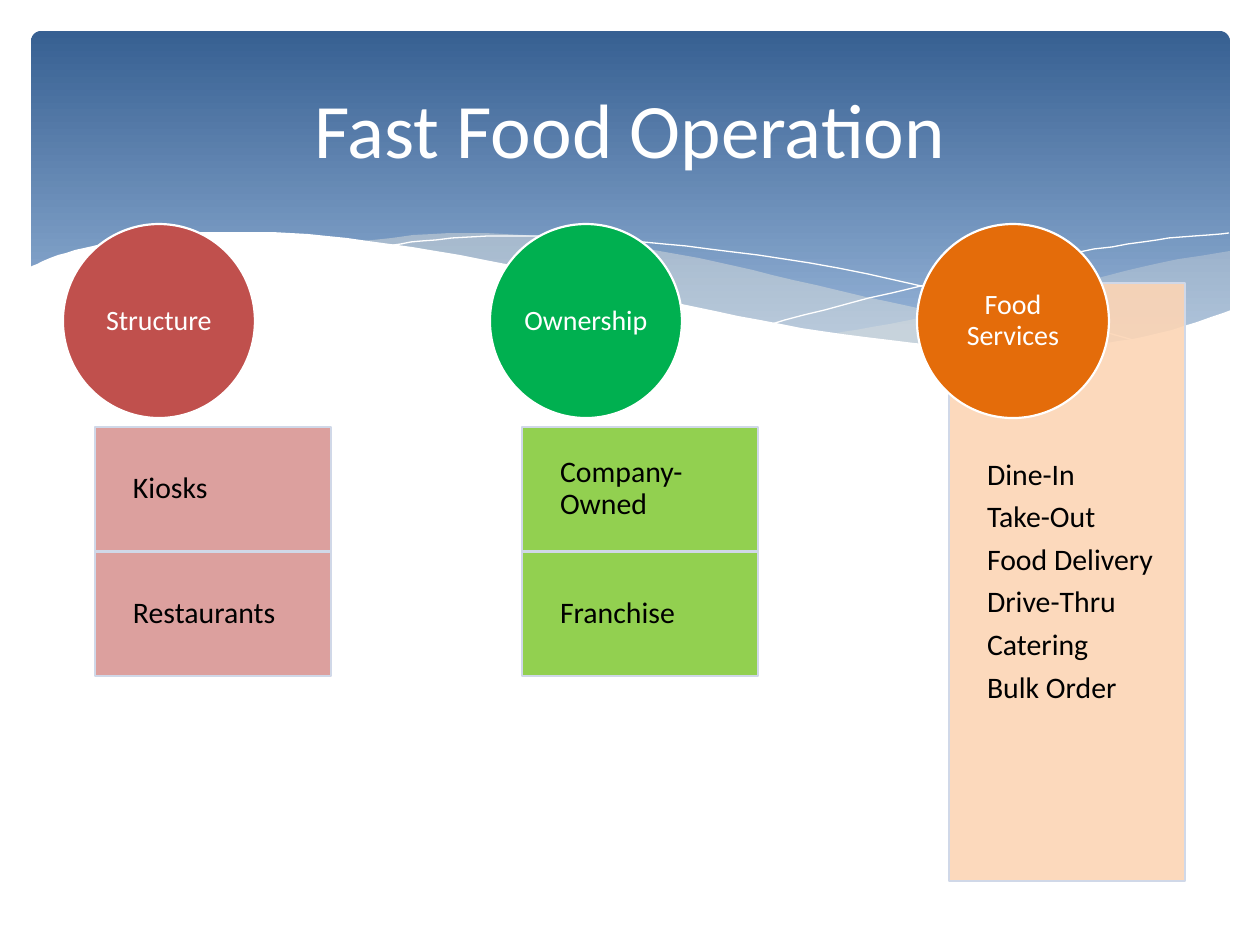
from dataclasses import dataclass

from lxml import etree
from pptx import Presentation
from pptx import util as u
from pptx.dml.color import RGBColor
from pptx.enum import shapes, text
from pptx.oxml import ns

PX = 914400 / 126


@dataclass(frozen=True)
class Theme:
    font: str = "Calibri"
    title_size: int = 44
    circle_size: int = 16
    panel_size: int = 17
    white: str = "FFFFFF"
    black: str = "000000"
    banner_top: str = "376092"
    banner_bottom: str = "95B3D7"
    wave: str = "EEECE1"
    panel_line: str = "D0D8E8"
    red: str = "C0504D"
    pink: str = "D99694"
    green: str = "00B050"
    lime: str = "92D050"
    orange: str = "E46C0A"
    peach: str = "FCD5B5"


THEME = Theme()

RIGHT_WAVE_TOP = [(1230, 251), (1160, 263), (1085, 281), (982, 305), (890, 324), (833, 334)]
RIGHT_WAVE_BOTTOM = [(833, 334), (905, 343), (984, 349), (1052, 349), (1110, 344),
                     (1160, 334), (1230, 311)]
MIDDLE_WAVE_TOP = [(1125, 344), (1055, 334), (977, 320), (890, 302), (793, 280), (717, 262),
                   (648, 249), (586, 241), (503, 234), (433, 234), (360, 241)]
MIDDLE_WAVE_BOTTOM = [(360, 241), (431, 251), (509, 266), (566, 280), (668, 302), (757, 321),
                      (838, 335), (910, 345), (989, 350), (1068, 349), (1125, 344)]
FALLING_LINE = [(389, 246), (422, 241), (488, 236), (567, 237), (643, 242), (733, 252),
                (838, 268), (958, 294), (1047, 316), (1143, 343)]
RISING_LINE = [(772, 324), (847, 304), (942, 281), (1053, 257), (1128, 244), (1182, 237),
               (1229, 233)]
FRONT_WAVE = [(1231, 310), (1184, 326), (1133, 339), (1071, 347), (1019, 349), (937, 345),
              (842, 334), (760, 320), (667, 301), (563, 277), (460, 255), (368, 241),
              (290, 233), (223, 232), (166, 234), (120, 241), (84, 248), (50, 258), (29, 268)]


def px(length):
    return u.Emu(round(length * PX))


def colour(value):
    return RGBColor.from_string(value)


def smooth(points, steps=4):
    """Sample a Catmull-Rom curve through the points."""
    padded = [points[0], *points, points[-1]]
    curve = [points[0]]
    for a, b, c, d in zip(padded, padded[1:], padded[2:], padded[3:]):
        for step in range(1, steps + 1):
            t = step / steps
            curve.append(tuple(
                (2 * q + (r - p) * t + (2 * p - 5 * q + 4 * r - s) * t ** 2
                 + (3 * q - p - 3 * r + s) * t ** 3) / 2
                for p, q, r, s in zip(a, b, c, d)))
    return curve


def paint(shape, fill=None, alpha=100, line=None, width=0.0):
    shape.shadow.inherit = False
    if fill:
        shape.fill.solid()
        shape.fill.fore_color.rgb = colour(fill)
        if alpha < 100:
            element = shape.fill._xPr.find(".//" + ns.qn("a:srgbClr"))
            etree.SubElement(element, ns.qn("a:alpha")).set("val", str(alpha * 1000))
    else:
        shape.fill.background()
    if line:
        shape.line.color.rgb = colour(line)
        shape.line.width = u.Pt(width)
    else:
        shape.line.fill.background()


def add_curve(slide, points, closed=True, **style):
    (x, y), *rest = points
    builder = slide.shapes.build_freeform(x, y, scale=PX)
    builder.add_line_segments(rest, close=closed)
    paint(builder.convert_to_shape(), **style)


def add_shape(slide, kind, box, **style):
    shape = slide.shapes.add_shape(kind, *map(px, box))
    paint(shape, **style)
    return shape


def write(shape, lines, size, text_colour, align, margins):
    frame = shape.text_frame
    frame.word_wrap = True
    frame.vertical_anchor = text.MSO_ANCHOR.MIDDLE
    (frame.margin_left, frame.margin_top,
     frame.margin_right, frame.margin_bottom) = map(px, margins)
    frame.text = "\n".join(lines)
    for paragraph in frame.paragraphs:
        paragraph.alignment = align
        paragraph.line_spacing = 0.9
        paragraph.space_after = u.Pt(6)
        font = paragraph.runs[0].font
        font.name, font.size = THEME.font, u.Pt(size)
        font.color.rgb = colour(text_colour)


def add_banner(slide, box):
    banner = add_shape(slide, shapes.MSO_SHAPE.ROUNDED_RECTANGLE, box)
    banner.adjustments[0] = 0.03
    banner.fill.gradient()
    banner.fill.gradient_angle = 270
    stops = zip(banner.fill.gradient_stops, (0, 0.9), (THEME.banner_top, THEME.banner_bottom))
    for stop, position, value in stops:
        stop.position = position
        stop.color.rgb = colour(value)

    add_curve(slide, smooth(RIGHT_WAVE_TOP) + smooth(RIGHT_WAVE_BOTTOM),
              fill=THEME.wave, alpha=29)
    add_curve(slide, smooth(MIDDLE_WAVE_TOP) + smooth(MIDDLE_WAVE_BOTTOM),
              fill=THEME.wave, alpha=40)
    for points in (FALLING_LINE, RISING_LINE):
        add_curve(slide, smooth(points), closed=False, line=THEME.white)
    add_curve(slide, smooth(FRONT_WAVE) + [(29, 415), (1231, 415)], fill=THEME.white)


def add_title(slide, box, title):
    shape = slide.shapes.add_textbox(*map(px, box))
    write(shape, [title], THEME.title_size, THEME.white, text.PP_ALIGN.CENTER, (12, 6, 12, 6))


def add_column(slide, box, heading, panels, panel_top, circle_fill, panel_fill, alpha):
    """Stack equal panels down to the box's foot, with a heading circle on top."""
    left, top, width, height = box
    panel_height = (height - panel_top) / len(panels)
    for row, lines in enumerate(panels):
        panel_box = (left + 32, top + panel_top + row * panel_height, width - 32, panel_height)
        panel = add_shape(slide, shapes.MSO_SHAPE.RECTANGLE, panel_box, fill=panel_fill,
                          alpha=alpha, line=THEME.panel_line, width=1.25)
        write(panel, lines, THEME.panel_size, THEME.black, text.PP_ALIGN.LEFT, (38, 16, 16, 16))
    circle = add_shape(slide, shapes.MSO_SHAPE.OVAL, (left, top, 192, 194), fill=circle_fill,
                       line=THEME.white, width=1.25)
    write(circle, [heading], THEME.circle_size, THEME.white, text.PP_ALIGN.CENTER, (0, 0, 0, 0))


def main():
    presentation = Presentation()
    presentation.slide_width, presentation.slide_height = px(1260), px(945)
    slide = presentation.slides.add_slide(presentation.slide_layouts[6])

    add_banner(slide, (31, 31, 1199, 340))
    add_title(slide, (63, 47, 1134, 173), "Fast Food Operation")

    services = ["Dine-In", "Take-Out", "Food Delivery", "Drive-Thru", "Catering", "Bulk Order"]
    columns = [
        ("Structure", [["Kiosks"], ["Restaurants"]], 203, 452, THEME.red, THEME.pink, 90),
        ("Ownership", [["Company-Owned"], ["Franchise"]], 203, 452, THEME.green, THEME.lime, 100),
        ("Food Services", [services], 59, 657, THEME.orange, THEME.peach, 90),
    ]
    for index, (heading, panels, panel_top, height, *fills) in enumerate(columns):
        add_column(slide, (63 + 427 * index, 224, 268, height), heading, panels, panel_top, *fills)

    presentation.save("out.pptx")


if __name__ == "__main__":
    main()
